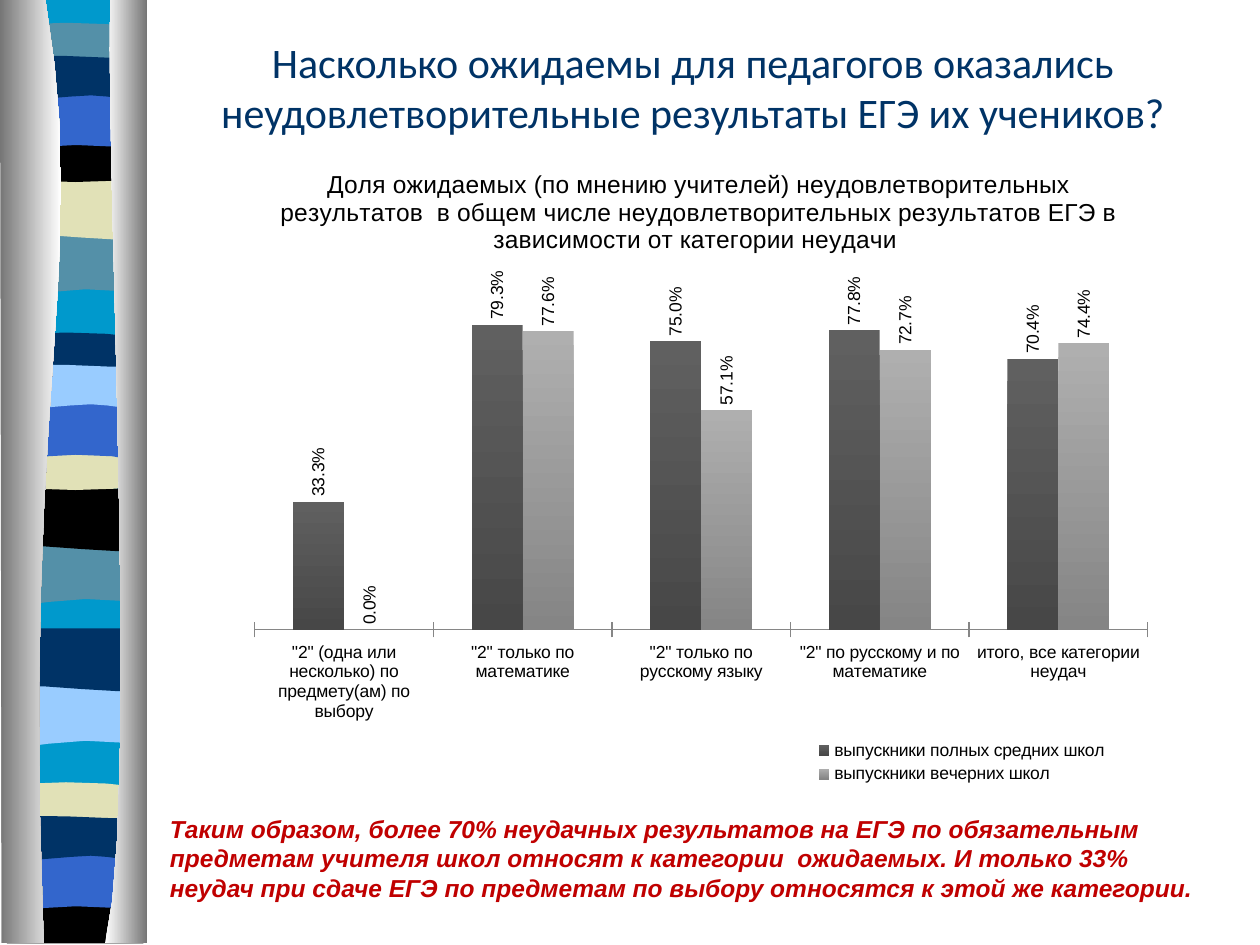
from dataclasses import dataclass

from lxml.etree import SubElement
from pptx import Presentation
from pptx.chart.data import CategoryChartData
from pptx.dml.color import RGBColor
from pptx.enum.chart import XL_CHART_TYPE, XL_LABEL_POSITION, XL_LEGEND_POSITION, XL_TICK_MARK
from pptx.enum.text import MSO_ANCHOR, PP_ALIGN
from pptx.oxml.ns import qn
from pptx.util import Pt


@dataclass(frozen=True)
class Theme:
    """Colours, fonts and type sizes of the slide."""
    navy: str = "003366"
    cyan: str = "0099CC"
    teal: str = "5490A8"
    sand: str = "E1E1B7"
    blue: str = "3366CC"
    sky: str = "99CCFF"
    black: str = "000000"
    red: str = "C00000"
    axis: str = "868686"
    metal: tuple = ("767676", "FFFFFF")
    bars: tuple = (("606060", "474747"), ("AFAFAF", "858585"))
    heading_font: str = "Calibri"
    body_font: str = "Arial"
    heading: int = 24
    body: int = 14
    label: int = 10


THEME = Theme()
WIDTH, HEIGHT = 720, 540
LEFT, RIGHT, BOTTOM = 4, 82, 539

WAVES = {
    "sag": [(RIGHT, 0), (RIGHT, 34), (28, 28, 17, 40, LEFT, 34), (LEFT, 0)],
    "ripple": [(RIGHT, 0), (RIGHT, 34), (69, 40, 28, 30, LEFT, 34), (LEFT, 0)],
    "crest": [(RIGHT, 4), (RIGHT, 21), (69, 24, 17, 24, LEFT, 21), (LEFT, 4),
              (15, 0, 57, 0, RIGHT, 4)],
    "dome": [(RIGHT, 0), (RIGHT, 23), (69, 27, 17, 27, LEFT, 23), (LEFT, 0),
             (52, 4, 65, 0, RIGHT, 0)],
    "base": [(RIGHT, 0), (RIGHT, 26), (LEFT, 26), (LEFT, 0), (52, 4, 65, 0, RIGHT, 0)],
    "arch": [(RIGHT, 0), (RIGHT, 34), (62, 28, 25, 29, LEFT, 34), (LEFT, 0)],
    "swell": [(RIGHT, 4), (RIGHT, 25), (77, 30, 65, 25, 52, 25),
              (39, 25, 12, 30, LEFT, 25), (LEFT, 4), (15, 0, 57, 4, RIGHT, 4)],
}
BANDS = [
    ("sag", 133, THEME.teal), ("ripple", 101, THEME.sand), ("crest", 12, THEME.teal),
    ("dome", 78, THEME.black), ("arch", 53, THEME.blue), ("swell", 29.5, THEME.navy),
    ("sag", 310, THEME.teal), ("ripple", 279, THEME.black), ("crest", 189, THEME.navy),
    ("dome", 254, THEME.sand), ("arch", 230, THEME.blue), ("swell", 206, THEME.sky),
    ("sag", 391, THEME.sky), ("ripple", 359, THEME.navy), ("crest", 446, THEME.sand),
    ("base", 513, THEME.black), ("arch", 488, THEME.blue), ("swell", 464, THEME.navy),
]
COLUMNS = [
    ([(26, 0), (52, 156, 12, 213, 25, BOTTOM), (1, BOTTOM), (0, 0)], THEME.metal),
    ([(63, 0), (60, 90, 80, 465, 60, BOTTOM), (84, BOTTOM), (84, 0)], THEME.metal[::-1]),
]

HEADING = "Насколько ожидаемы для педагогов оказались неудовлетворительные результаты ЕГЭ их учеников?"
CHART_TITLE = ("Доля ожидаемых (по мнению учителей) неудовлетворительных результатов  в общем числе "
               "неудовлетворительных результатов ЕГЭ в зависимости от категории неудачи ")
SUMMARY = ("Таким образом, более 70% неудачных результатов на ЕГЭ по обязательным предметам учителя "
           "школ относят к категории  ожидаемых. И только 33% неудач при сдаче ЕГЭ по предметам "
           "по выбору относятся к этой же категории.")
CATEGORIES = ['"2" (одна или несколько) по предмету(ам) по выбору', '"2" только по математике',
              '"2" только по русскому языку', '"2" по русскому и по математике',
              "итого, все категории неудач"]
SERIES = {
    "выпускники полных средних школ": (0.333, 0.793, 0.75, 0.778, 0.704),
    "выпускники вечерних школ": (0, 0.776, 0.571, 0.727, 0.744),
}


def rgb(color):
    """Turn a hex string into a colour."""
    return RGBColor.from_string(color)


def set_font(font, size, color=THEME.black, name=THEME.body_font, bold=False, italic=False):
    """Apply typeface, size, colour and style."""
    font.name, font.size, font.bold, font.italic = name, Pt(size), bold, italic
    font.color.rgb = rgb(color)


def set_gradient(fill, colors, angle):
    """Fill with an even two-colour gradient."""
    fill.gradient()
    fill.gradient_angle = angle
    for stop, position, color in zip(fill.gradient_stops, (0, 1), colors):
        stop.position, stop.color.rgb = position, rgb(color)


def flatten(outline):
    """Turn points and cubic curve segments into points, more of them on tall curves."""
    points = [outline[0]]
    for segment in outline[1:]:
        if len(segment) == 2:
            points.append(segment)
            continue
        x0, y0 = points[-1]
        x1, y1, x2, y2, x3, y3 = segment
        steps = max(4, round(abs(y3 - y0) / 45))
        for i in range(1, steps + 1):
            t = i / steps
            a, b, c, d = (1 - t) ** 3, 3 * t * (1 - t) ** 2, 3 * t * t * (1 - t), t ** 3
            points.append((a * x0 + b * x1 + c * x2 + d * x3,
                           a * y0 + b * y1 + c * y2 + d * y3))
    return points


def add_outline(s, outline, top=0):
    """Add a closed freeform without line or shadow."""
    points = [(Pt(x), Pt(y + top)) for x, y in flatten(outline)]
    builder = s.shapes.build_freeform(*points[0])
    builder.add_line_segments(points[1:], close=True)
    sp = builder.convert_to_shape()
    sp.shadow.inherit = False
    sp.line.fill.background()
    return sp


def add_ribbon(s):
    """Draw the wavy ribbon between two metal columns."""
    backing = [(LEFT, 0), (RIGHT, 0), (RIGHT, 538), (LEFT, 538)]
    for outline, top, color in [(backing, 0, THEME.cyan)] + [(WAVES[w], y, c) for w, y, c in BANDS]:
        sp = add_outline(s, outline, top)
        sp.fill.solid()
        sp.fill.fore_color.rgb = rgb(color)
    for outline, colors in COLUMNS:
        set_gradient(add_outline(s, outline).fill, colors, 0)


def add_text(s, text, box, align, anchor, **font):
    """Add a wrapped one-paragraph text box."""
    tf = s.shapes.add_textbox(*map(Pt, box)).text_frame
    tf.word_wrap, tf.vertical_anchor = True, anchor
    p = tf.paragraphs[0]
    p.text, p.alignment = text, align
    set_font(p.runs[0].font, **font)


def set_layout(element, **fractions):
    """Place a chart part at fractions of the chart frame."""
    layout = element.find(qn("c:layout"))
    if layout is None:
        layout = SubElement(element, qn("c:layout"))
        element.find(qn("c:overlay")).addprevious(layout)
    for child in list(layout):
        layout.remove(child)
    manual = SubElement(layout, qn("c:manualLayout"))
    for tag, value in fractions.items():
        SubElement(manual, qn(f"c:{tag}")).set("val", str(value))


def add_bars(s, box):
    """Add the clustered column chart."""
    data = CategoryChartData(number_format="0.0%")
    data.categories = CATEGORIES
    for name, values in SERIES.items():
        data.add_series(name, values)
    chart = s.shapes.add_chart(XL_CHART_TYPE.COLUMN_CLUSTERED, *map(Pt, box), data).chart
    set_font(chart.font, THEME.label)

    title = chart.chart_title
    title.text_frame.text = CHART_TITLE
    set_font(title.text_frame.paragraphs[0].runs[0].font, THEME.body)
    chart.has_legend = True
    legend = chart.legend
    legend.position, legend.include_in_layout = XL_LEGEND_POSITION.RIGHT, False
    set_font(legend.font, THEME.label)

    axis = chart.category_axis
    axis.major_tick_mark = XL_TICK_MARK.CROSS
    axis.format.line.color.rgb = rgb(THEME.axis)
    chart.value_axis.visible = chart.value_axis.has_major_gridlines = False
    chart.value_axis.minimum_scale, chart.value_axis.maximum_scale = 0, 0.9

    plot = chart.plots[0]
    plot.gap_width, plot.overlap, plot.vary_by_categories = 150, 0, False
    for series, colors in zip(plot.series, THEME.bars):
        set_gradient(series.format.fill, colors, 270)
        labels = series.data_labels
        labels.show_value, labels.position = True, XL_LABEL_POSITION.OUTSIDE_END
        labels.number_format, labels.number_format_is_linked = "0.0%", False
        set_font(labels.font, THEME.label)
        body = labels._element.find(qn("c:txPr")).find(qn("a:bodyPr"))
        body.set("rot", "-5400000")
        body.set("vert", "horz")

    edges = {"xMode": "edge", "yMode": "edge"}
    set_layout(title._element, **edges, x=0.13, y=0.01)
    set_layout(legend._element, **edges, x=0.63, y=0.92, w=0.29, h=0.08)
    area = chart._chartSpace.chart.plotArea
    if area.find(qn("c:layout")) is None:
        area.insert(0, area.makeelement(qn("c:layout")))
    set_layout(area, layoutTarget="inner", **edges, x=0.11, y=0.2, w=0.84, h=0.55)


def main():
    """Build and save the slide."""
    prs = Presentation()
    prs.slide_width, prs.slide_height = Pt(WIDTH), Pt(HEIGHT)
    s = prs.slides.add_slide(prs.slide_layouts[6])
    add_ribbon(s)
    add_text(s, HEADING, (90, 22.5, 612, 54), PP_ALIGN.CENTER, MSO_ANCHOR.MIDDLE,
             size=THEME.heading, color=THEME.navy, name=THEME.heading_font)
    add_bars(s, (78.75, 90, 607.5, 360))
    add_text(s, SUMMARY, (90, 461.5, 613.5, 58), PP_ALIGN.LEFT, MSO_ANCHOR.TOP,
             size=THEME.body, color=THEME.red, bold=True, italic=True)
    prs.save("out.pptx")


if __name__ == "__main__":
    main()
